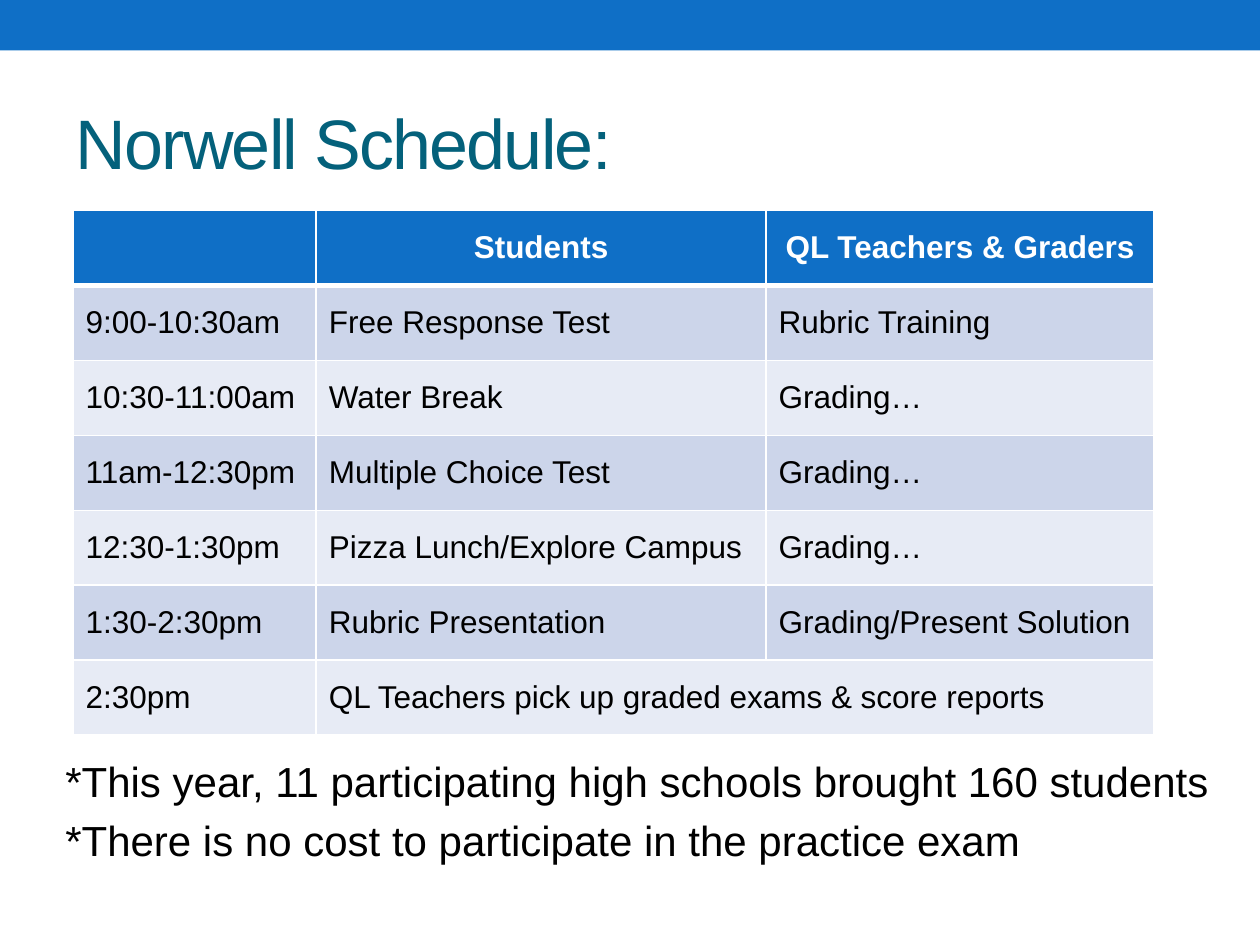
from dataclasses import dataclass

from lxml.etree import SubElement
from pptx import Presentation
from pptx.dml.color import RGBColor
from pptx.enum.shapes import MSO_SHAPE
from pptx.enum.text import MSO_ANCHOR, PP_ALIGN
from pptx.oxml.ns import qn
from pptx.util import Inches, Pt


@dataclass(frozen=True)
class Theme:
    font: str = "Arial"
    accent: str = "0F6FC6"
    title: str = "04617B"
    text: str = "000000"
    white: str = "FFFFFF"
    bands: tuple[str, str] = ("CCD5EA", "E7EBF5")
    title_size: int = 40
    note_size: int = 24
    cell_size: int = 18
    rule: int = 1
    header_rule: int = 3


@dataclass(frozen=True)
class Session:
    time: str
    students: str
    teachers: str = ""  # empty: the students' entry covers both columns


THEME = Theme()
HEADINGS = ("", "Students", "QL Teachers & Graders")
SESSIONS = (
    Session("9:00-10:30am", "Free Response Test", "Rubric Training"),
    Session("10:30-11:00am", "Water Break", "Grading…"),
    Session("11am-12:30pm", "Multiple Choice Test", "Grading…"),
    Session("12:30-1:30pm", "Pizza Lunch/Explore Campus", "Grading…"),
    Session("1:30-2:30pm", "Rubric Presentation", "Grading/Present Solution"),
    Session("2:30pm", "QL Teachers pick up graded exams & score reports"),
)
NOTES = (
    "*This year, 11 participating high schools brought 160 students",
    "*There is no cost to participate in the practice exam",
)
COL_WIDTHS = (1.93, 3.57, 3.08)
ROW_HEIGHT = 0.595


def add_run(p, text: str, size: int, color: str, bold: bool = False):
    r = p.add_run()
    r.text = text
    r.font.name = THEME.font
    r.font.size = Pt(size)
    r.font.bold = bold
    r.font.color.rgb = RGBColor.from_string(color)
    return r


def add_banner(s) -> None:
    sp = s.shapes.add_shape(MSO_SHAPE.RECTANGLE, 0, 0, Inches(10), Inches(0.4))
    sp.shadow.inherit = False
    sp.fill.solid()
    sp.fill.fore_color.rgb = RGBColor.from_string(THEME.accent)
    sp.line.fill.background()


def add_title(s, text: str) -> None:
    sp = s.shapes.title
    sp.left, sp.top = Inches(0.5), Inches(0.58)
    sp.width, sp.height = Inches(9), Inches(1.08)
    tf = sp.text_frame
    tf.vertical_anchor = MSO_ANCHOR.MIDDLE
    p = tf.paragraphs[0]
    p.alignment = PP_ALIGN.LEFT
    r = add_run(p, text, THEME.title_size, THEME.title)
    r.font._element.set("spc", "-100")  # tighten letters by 1 pt


def set_borders(cell, top: int, bottom: int) -> None:
    tc_pr = cell._tc.get_or_add_tcPr()
    widths = {"lnL": THEME.rule, "lnR": THEME.rule, "lnT": top, "lnB": bottom}
    for tag, width in widths.items():
        ln = SubElement(tc_pr, qn(f"a:{tag}"), w=str(Pt(width)))
        fill = SubElement(ln, qn("a:solidFill"))
        SubElement(fill, qn("a:srgbClr"), val=THEME.white)


def format_cell(cell, text: str, row: int) -> None:
    header = row == 0
    set_borders(
        cell,
        top=THEME.header_rule if row == 1 else THEME.rule,
        bottom=THEME.header_rule if header else THEME.rule,
    )
    cell.fill.solid()
    fill = THEME.accent if header else THEME.bands[(row - 1) % 2]
    cell.fill.fore_color.rgb = RGBColor.from_string(fill)
    cell.vertical_anchor = MSO_ANCHOR.MIDDLE
    p = cell.text_frame.paragraphs[0]
    p.alignment = PP_ALIGN.CENTER if header else PP_ALIGN.LEFT
    if text:
        color = THEME.white if header else THEME.text
        add_run(p, text, THEME.cell_size, color, bold=header)


def add_schedule(s) -> None:
    rows = [HEADINGS] + [(x.time, x.students, x.teachers) for x in SESSIONS]
    table = s.shapes.add_table(
        len(rows), len(COL_WIDTHS), Inches(0.58), Inches(1.67),
        Inches(sum(COL_WIDTHS)), Inches(ROW_HEIGHT * len(rows)),
    ).table
    for col, width in zip(table.columns, COL_WIDTHS):
        col.width = Inches(width)
    for i, texts in enumerate(rows):
        table.rows[i].height = Inches(ROW_HEIGHT)
        for j, text in enumerate(texts):
            format_cell(table.cell(i, j), text, i)
        if not texts[-1]:
            table.cell(i, 1).merge(table.cell(i, 2))


def add_notes(s) -> None:
    sp = s.shapes.add_textbox(Inches(0.42), Inches(5.95), Inches(9.3), Inches(1))
    tf = sp.text_frame
    tf.word_wrap = True
    for i, note in enumerate(NOTES):
        p = tf.add_paragraph() if i else tf.paragraphs[0]
        p.space_after = Pt(5)
        add_run(p, note, THEME.note_size, THEME.text)


def main() -> None:
    prs = Presentation()
    prs.slide_width, prs.slide_height = Inches(10), Inches(7.5)
    s = prs.slides.add_slide(prs.slide_layouts[5])  # title only

    # Heading
    add_banner(s)
    add_title(s, "Norwell Schedule:")

    # Timetable and remarks below it
    add_schedule(s)
    add_notes(s)

    prs.save("out.pptx")


if __name__ == "__main__":
    main()
